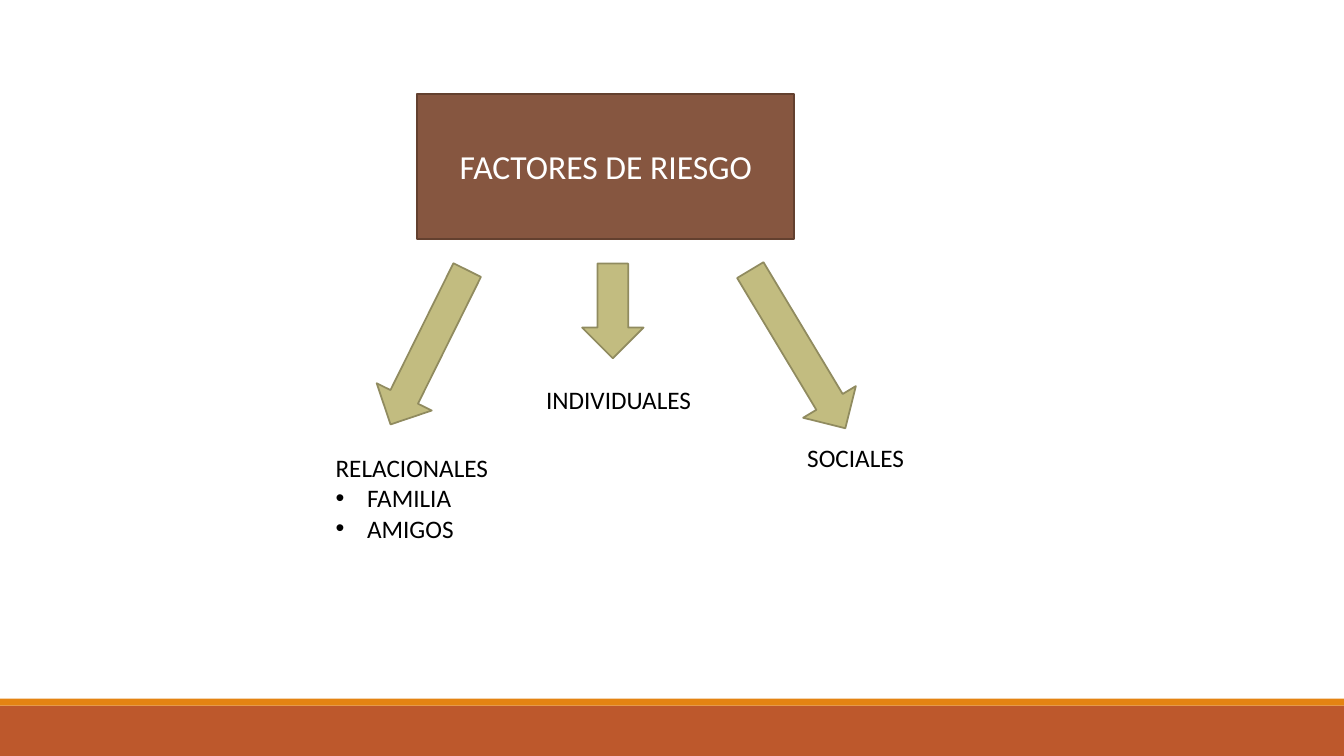
from pptx import Presentation
from pptx.dml.color import RGBColor
from pptx.enum.shapes import MSO_SHAPE as Shape
from pptx.enum.text import MSO_ANCHOR as Anchor, MSO_AUTO_SIZE as Fit, PP_ALIGN as Align
from pptx.oxml import parse_xml
from pptx.oxml.ns import nsdecls
from pptx.util import Pt

# Content: boxes are left, top, width, height in points
TITLE = "FACTORES DE RIESGO"
TITLE_BOX = (298.1, 67, 269.3, 103.7)
LABELS = [
    ("INDIVIDUALES", [], (383, 270.7, 121, 28.8)),
    ("SOCIALES", [], (569.5, 312.5, 97.2, 28.8)),
    ("RELACIONALES", ["FAMILIA", "AMIGOS"], (232.6, 319.7, 149.8, 72.7)),
]
ARROWS = [  # left, top, length, turn in degrees
    (244.8, 226.1, 123.1, 116.4),
    (403.9, 200.2, 67.7, 90),
    (504, 227.5, 131.8, 59),
]
THICK = 43.9
INDENT = 22.5

WHITE = RGBColor(0xFF, 0xFF, 0xFF)
BLACK = RGBColor(0, 0, 0)
BROWN = RGBColor(0x86, 0x56, 0x40)
UMBER = RGBColor(0x63, 0x40, 0x2F)
SAND = RGBColor(0xC2, 0xBC, 0x80)
OLIVE = RGBColor(0x90, 0x8B, 0x5F)
RUST = RGBColor(0xBD, 0x58, 0x2C)
ORANGE = RGBColor(0xE4, 0x83, 0x12)
FONT = "Calibri"
WIDE, HIGH = 960, 540
BANDS = [(504, 36, RUST), (499, 5, ORANGE)]  # top, height, colour


def points(box):
    return [Pt(n) for n in box]


def paint(shape, fill, line=None):
    shape.fill.solid()
    shape.fill.fore_color.rgb = fill
    if line is None:
        shape.line.fill.background()
    else:
        shape.line.color.rgb = line
        shape.line.width = Pt(1.25)


def draw(kind, box, fill, line=None):
    shape = slide.shapes.add_shape(kind, *points(box))
    shape.shadow.inherit = False
    paint(shape, fill, line)
    return shape


def style(para, size, color):
    for run in para.runs:
        run.font.name = FONT
        run.font.size = Pt(size)
        run.font.color.rgb = color


def bullet(para):
    props = para._p.get_or_add_pPr()
    props.set("marL", str(Pt(INDENT)))
    props.set("indent", str(-Pt(INDENT)))
    for tag in (f'<a:buFont {nsdecls("a")} typeface="Arial"/>',
                f'<a:buChar {nsdecls("a")} char="•"/>'):
        props.append(parse_xml(tag))


deck = Presentation()
deck.slide_width, deck.slide_height = Pt(WIDE), Pt(HIGH)
slide = deck.slides.add_slide(deck.slide_layouts[5])

# Bands at the foot
for top, height, color in BANDS:
    draw(Shape.RECTANGLE, (0, top, WIDE, height), color)

# Arrows
for left, top, length, turn in ARROWS:
    arrow = draw(Shape.RIGHT_ARROW, (left, top, length, THICK), SAND, OLIVE)
    arrow.rotation = turn

# Labels with their bullet items
for head, items, box in LABELS:
    frame = slide.shapes.add_textbox(*points(box)).text_frame
    frame.word_wrap = True
    frame.auto_size = Fit.SHAPE_TO_FIT_TEXT
    frame.text = "\n".join([head, *items])
    for para in frame.paragraphs:
        style(para, 18, BLACK)
    for para in frame.paragraphs[1:]:
        bullet(para)

# Title box
title = slide.shapes.title
title.left, title.top, title.width, title.height = points(TITLE_BOX)
paint(title, BROWN, UMBER)
frame = title.text_frame
frame.text = TITLE
frame.auto_size = Fit.NONE
frame.word_wrap = True
frame.vertical_anchor = Anchor.MIDDLE
frame.paragraphs[0].alignment = Align.CENTER
style(frame.paragraphs[0], 24, WHITE)

deck.save("out.pptx")
